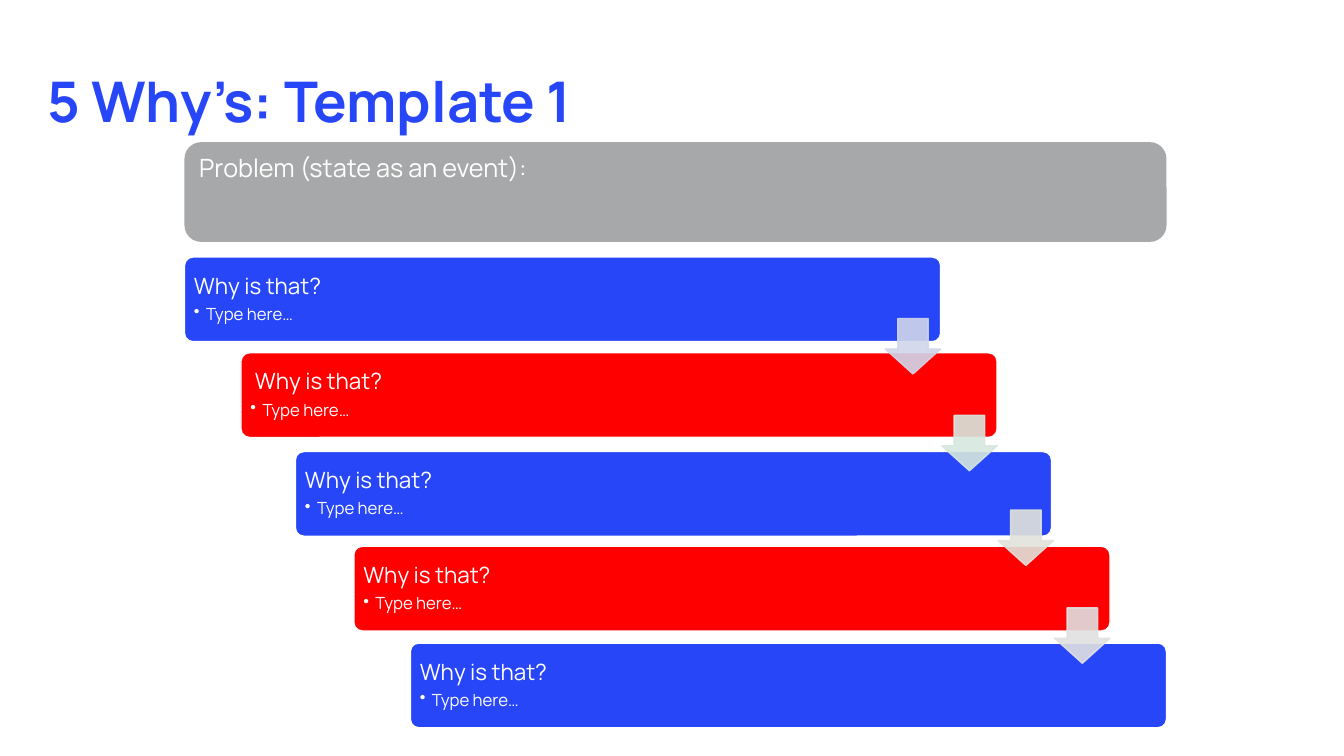
from lxml import etree
from pptx import Presentation
from pptx.dml.color import RGBColor
from pptx.enum.shapes import MSO_SHAPE as SHAPE
from pptx.enum.text import MSO_ANCHOR as ANCHOR, MSO_AUTO_SIZE as AUTO_SIZE, PP_ALIGN as ALIGN
from pptx.oxml.ns import qn
from pptx.util import Inches, Pt

COLORS = {"blue": "2746F8", "red": "FF0000", "grey": "A7A8A9", "white": "FFFFFF"}
FONT = "Manrope"


def add_block(kind, left, top, width, height, fill, line=None):
    """Add a flat preset shape, outlined only when a line colour is given."""
    block = slide.shapes.add_shape(kind, Inches(left), Inches(top), Inches(width), Inches(height))
    block.shadow.inherit = False
    block.fill.solid()
    block.fill.fore_color.rgb = RGBColor.from_string(fill)
    if line:
        block.line.color.rgb = RGBColor.from_string(line)
        block.line.width = Pt(1)
    else:
        block.line.fill.background()
    return block


def write(paragraph, text, size, color, bold=False):
    paragraph.alignment = ALIGN.LEFT
    run = paragraph.add_run()
    run.text = text
    run.font.name = FONT
    run.font.size = Pt(size)
    run.font.bold = bold
    run.font.color.rgb = RGBColor.from_string(color)


prs = Presentation()
prs.slide_width = Inches(13.33)
prs.slide_height = Inches(7.5)
slide = prs.slides.add_slide(prs.slide_layouts[5])

# Title
title = slide.shapes.title
title.left, title.top = Inches(0.47), Inches(0.07)
title.width, title.height = Inches(12.38), Inches(1.19)
heading = title.text_frame
heading.auto_size = AUTO_SIZE.NONE
heading.vertical_anchor = ANCHOR.TOP
heading.margin_left = heading.margin_right = heading.margin_top = heading.margin_bottom = 0
heading.paragraphs[0].line_spacing = Pt(90.2)
write(heading.paragraphs[0], "5 Why’s: Template 1", 40, COLORS["blue"], bold=True)

# Staircase of whys
whys = [
    (1.83, 2.55, "blue", "Why is that?"),
    (2.39, 3.5, "red", " Why is that?"),
    (2.93, 4.48, "blue", "Why is that?"),
    (3.51, 5.42, "red", "Why is that?"),
    (4.07, 6.38, "blue", "Why is that?"),
]
for left, top, color, question in whys:
    card = add_block(SHAPE.ROUNDED_RECTANGLE, left, top, 7.5, 0.84, COLORS[color], COLORS["white"])
    card.adjustments[0] = 0.1
    frame = card.text_frame
    frame.word_wrap = True
    frame.vertical_anchor = ANCHOR.MIDDLE
    frame.margin_left = frame.margin_right = frame.margin_top = frame.margin_bottom = Inches(0.07)

    why = frame.paragraphs[0]
    why.line_spacing = 0.9
    why.space_after = Pt(5)
    write(why, question, 16, COLORS["white"])

    answer = frame.add_paragraph()
    answer.level = 1
    answer.line_spacing = 0.9
    answer_props = answer._p.get_or_add_pPr()
    answer_props.set("marL", str(Inches(0.12)))
    answer_props.set("indent", str(-Inches(0.12)))
    etree.SubElement(answer_props, qn("a:buChar")).set("char", "•")
    write(answer, "Type here…", 12, COLORS["white"])

# Arrows leading from each why to the next
arrows = [(3.16, "D0D6EA"), (4.12, "D6E7DE"), (5.06, "E1E3DB"), (6.03, "E1E1E1")]
for step, (top, tint) in enumerate(arrows):
    arrow = add_block(SHAPE.DOWN_ARROW, 8.78 + 0.56 * step, top, 0.55, 0.55, tint, tint)
    arrow.adjustments[0] = 0.55
    arrow.adjustments[1] = 0.45
    for tint_color in arrow._element.spPr.iter(qn("a:srgbClr")):
        etree.SubElement(tint_color, qn("a:alpha")).set("val", "90000")

# Problem statement
problem = add_block(SHAPE.ROUNDED_RECTANGLE, 1.83, 1.41, 9.74, 0.99, COLORS["grey"])
problem.text_frame.word_wrap = True
problem.text_frame.vertical_anchor = ANCHOR.TOP
write(problem.text_frame.paragraphs[0], "Problem (state as an event):", 18, COLORS["white"])

prs.save("out.pptx")
